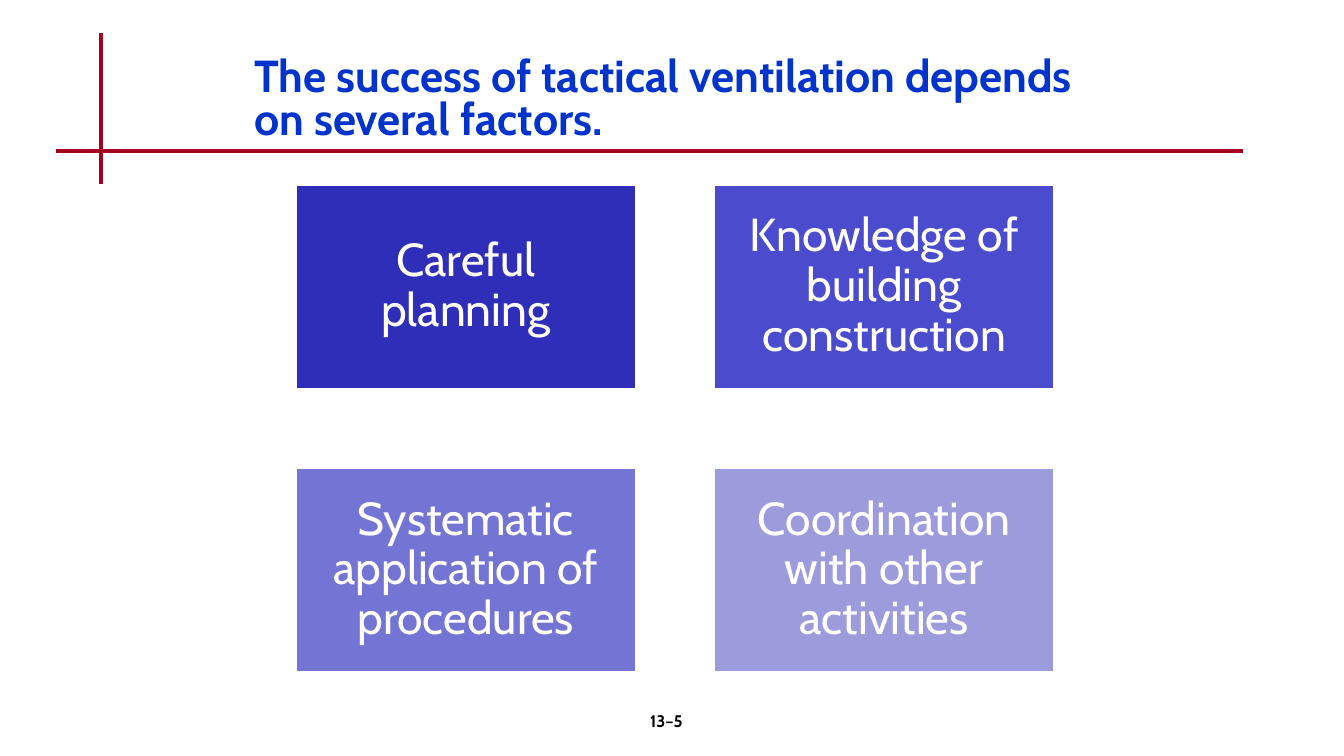
from pptx import Presentation, util as u
from pptx.dml.color import RGBColor
from pptx.enum import shapes, text
from pptx.oxml.ns import qn
from lxml import etree


def tint(code):
    """Turn a hex string into a colour."""
    return RGBColor.from_string(code)


class Deck:
    """Hold the style and the current slide."""

    font = "Cabin"
    red, blue, black, white = "A50021", "0033CC", "000000", "FFFFFF"

    def __init__(self):
        """Open a wide deck with one title-only slide."""
        self.show = Presentation()
        self.show.slide_width = u.Inches(13.33)
        self.show.slide_height = u.Inches(7.5)
        self.slide = self.show.slides.add_slide(self.show.slide_layouts[5])

    def letter(self, shape, words, size, color, bold=False, align="LEFT",
               anchor="MIDDLE", space=1.0, inset=(0.1, 0.05)):
        """Set the words of a shape and their format."""
        frame = shape.text_frame
        side, edge = map(u.Inches, inset)
        frame.text = words
        para = frame.paragraphs[0]
        jobs = [
            (frame, {"word_wrap": True, "auto_size": text.MSO_AUTO_SIZE.NONE,
                     "vertical_anchor": text.MSO_ANCHOR[anchor],
                     "margin_left": side, "margin_right": side,
                     "margin_top": edge, "margin_bottom": edge}),
            (para, {"alignment": text.PP_ALIGN[align], "line_spacing": space,
                    "space_before": u.Pt(0)}),
            (para.runs[0].font, {"name": self.font, "size": u.Pt(size),
                                 "bold": bold}),
        ]
        for item, values in jobs:
            for key, value in values.items():
                setattr(item, key, value)
        para.runs[0].font.color.rgb = tint(color)

    def title(self, words, *place):
        """Place and fill the title."""
        head = self.slide.shapes.title
        for key, value in zip(("left", "top", "width", "height"), place):
            setattr(head, key, u.Inches(value))
        self.letter(head, words, 32, self.blue, bold=True, space=0.8)

    def rule(self, *ends):
        """Draw a red rule."""
        line = self.slide.shapes.add_connector(
            shapes.MSO_CONNECTOR.STRAIGHT, *map(u.Inches, ends))
        line.line.color.rgb = tint(self.red)
        line.line.width = u.Pt(3)
        etree.SubElement(line._element.spPr, qn("a:effectLst"))

    def label(self, words, *place):
        """Add a small centred label."""
        box = self.slide.shapes.add_textbox(*map(u.Inches, place))
        self.letter(box, words, 12, self.black, bold=True, align="CENTER",
                    anchor="TOP")

    def card(self, words, fill, *place):
        """Add a filled card with centred words."""
        card = self.slide.shapes.add_shape(
            shapes.MSO_SHAPE.RECTANGLE, *map(u.Inches, place))
        card.shadow.inherit = False
        card.fill.solid()
        card.fill.fore_color.rgb = tint(fill)
        card.line.color.rgb = tint(self.white)
        card.line.width = u.Pt(2)
        self.letter(card, words, 33, self.white, align="CENTER", space=0.9,
                    inset=(0.26, 0.26))


def main():
    """Build and save the slide."""
    deck = Deck()
    deck.rule(1, 0.33, 1, 1.83)
    deck.rule(0.56, 1.5, 12.33, 1.5)
    deck.title("The success of tactical ventilation depends on several factors.",
               2.42, 0.5, 8.5, 1)
    deck.label("13–5", 5.22, 7, 2.78, 0.5)
    cards = [
        ("Careful planning", "2E2EB9"),
        ("Knowledge of building construction", "4B4BCD"),
        ("Systematic application of procedures", "7474D4"),
        ("Coordination with other activities", "9C9CDD"),
    ]
    for i, (words, fill) in enumerate(cards):
        row, col = divmod(i, 2)
        deck.card(words, fill, 2.93 + 4.15 * col, 1.83 + 2.81 * row, 3.38, 2.03)
    deck.show.save("out.pptx")


if __name__ == "__main__":
    main()
